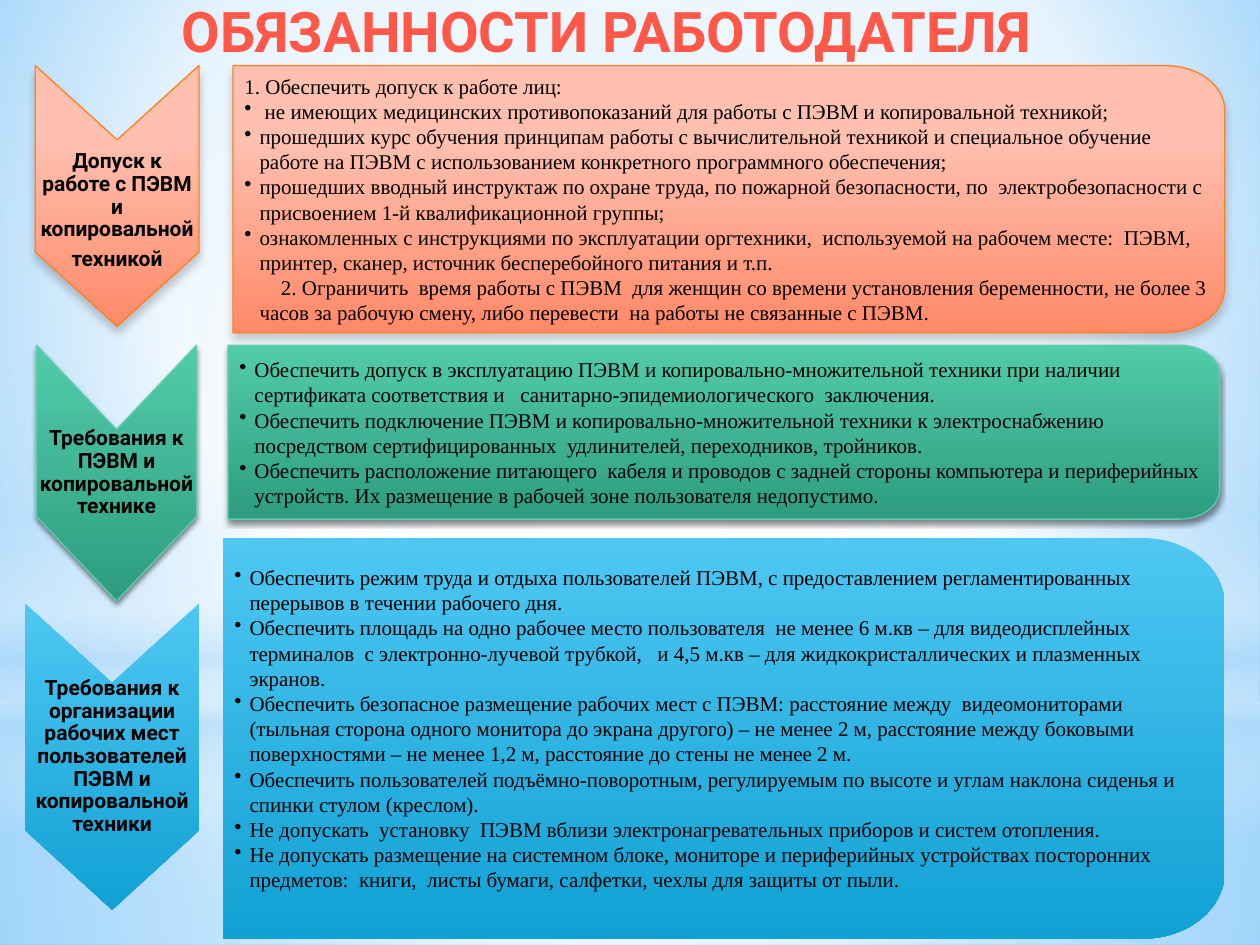
from math import cos, pi, sin

from lxml.etree import SubElement
from pptx import Presentation
from pptx.dml.color import RGBColor
from pptx.enum.shapes import MSO_SHAPE
from pptx.enum.text import MSO_ANCHOR, PP_ALIGN
from pptx.oxml import parse_xml
from pptx.oxml.ns import nsdecls, qn
from pptx.util import Inches, Pt

CORAL = [(28, "FFC0AF"), (100, "FF8968")]
GREEN = [(0, "52CBA9"), (100, "2E9D7F")]
BLUE = [(0, "4EC7F2"), (100, "11A1D4")]
TITLE_RED = [(0, "FF6155"), (25, "FF5748"), (50, "EF3718"), (75, "FF5748"), (100, "FF6155")]
CENTRE = (50, 50, 50, 50)

# Backdrop layers: preset, box, stops (position, colour, opacity), focus of a radial fill
BACKDROP = [
    (MSO_SHAPE.RECTANGLE, (0, 5.58, 10, 1.92),
     [(0, "FFFFFF", 91), (37, "FFFFFF", 76), (100, "B4DCFA", 79)], CENTRE),
    (MSO_SHAPE.RECTANGLE, (0, 0, 10, 5.58),
     [(0, "FFFFFF", 89), (48, "FFFFFF", 62), (100, "B4DCFA", 79)], CENTRE),
    (MSO_SHAPE.RECTANGLE, (0, 4.12, 10, 2.5),
     [(0, "FFFFFF", 0), (29, "FFFFFF", 30), (45, "B4DCFA", 40),
      (55, "FFFFFF", 26), (65, "B4DCFA", 60), (100, "FFFFFF", 0)], None),
    (MSO_SHAPE.OVAL, (0, 1.75, 10, 5.58), [(0, "FFFFFF"), (56, "FFFFFF", 0)], CENTRE),
]

# Each duty is (kind, text): "bullet", "plain" or "indented"
DUTIES = [
    dict(
        stops=CORAL, line="FF8021", shadow=(20, 5, 4),
        arrow=(0.28, 0.52, 1.3, 2.07), notch=0.59, arrow_insets=(0.01, 0.82, 0.01, 0.58),
        heading=["Допуск к работе с ПЭВМ и копировальной", "техникой"],
        panel=(1.85, 0.52, 7.87, 2.12), corner=0.47, panel_insets=(0.09, 0.11, 0.11, 0.11),
        duties=[
            ("plain", "1. Обеспечить допуск к работе лиц:"),
            ("bullet", " не имеющих медицинских противопоказаний для работы с ПЭВМ и копировальной техникой;"),
            ("bullet", "прошедших курс обучения принципам работы с вычислительной техникой и специальное обучение работе на ПЭВМ с использованием конкретного программного обеспечения;"),
            ("bullet", "прошедших вводный инструктаж по охране труда, по пожарной безопасности, по  электробезопасности с присвоением 1-й квалификационной группы;"),
            ("bullet", "ознакомленных с инструкциями по эксплуатации оргтехники,  используемой на рабочем месте:  ПЭВМ, принтер, сканер, источник бесперебойного питания и т.п."),
            ("indented", "2. Ограничить  время работы с ПЭВМ  для женщин со времени установления беременности, не более 3 часов за рабочую смену, либо перевести  на работы не связанные с ПЭВМ."),
        ]),
    dict(
        stops=GREEN, line="5DCEAF", shadow=(45, 3.1, 1.8),
        arrow=(0.29, 2.74, 1.27, 2.03), notch=0.67, arrow_insets=(0.01, 0.6, 0.01, 0.6),
        heading=["Требования к ПЭВМ и копировальной технике"],
        panel=(1.81, 2.74, 7.87, 1.38), corner=0.32, panel_insets=(0.09, 0.07, 0.07, 0.07),
        duties=[
            ("bullet", "Обеспечить допуск в эксплуатацию ПЭВМ и копировально-множительной техники при наличии  сертификата соответствия и   санитарно-эпидемиологического  заключения."),
            ("bullet", "Обеспечить подключение ПЭВМ и копировально-множительной техники к электроснабжению посредством сертифицированных  удлинителей, переходников, тройников."),
            ("bullet", "Обеспечить расположение питающего  кабеля и проводов с задней стороны компьютера и периферийных устройств. Их размещение в рабочей зоне пользователя недопустимо."),
        ]),
    dict(
        stops=BLUE, line=None, shadow=None,
        arrow=(0.2, 4.79, 1.38, 2.43), notch=0.63, arrow_insets=(0.01, 0.62, 0.01, 0.62),
        heading=["Требования к организации рабочих мест пользователей ПЭВМ и копировальной техники"],
        panel=(1.77, 4.27, 7.95, 3.18), corner=0.65, panel_insets=(0.09, 0.15, 0.15, 0.31),
        duties=[
            ("bullet", "Обеспечить режим труда и отдыха пользователей ПЭВМ, с предоставлением регламентированных перерывов в течении рабочего дня."),
            ("bullet", "Обеспечить площадь на одно рабочее место пользователя  не менее 6 м.кв – для видеодисплейных терминалов  с электронно-лучевой трубкой,   и 4,5 м.кв – для жидкокристаллических и плазменных экранов."),
            ("bullet", "Обеспечить безопасное размещение рабочих мест с ПЭВМ: расстояние между  видеомониторами (тыльная сторона одного монитора до экрана другого) – не менее 2 м, расстояние между боковыми поверхностями – не менее 1,2 м, расстояние до стены не менее 2 м."),
            ("bullet", "Обеспечить пользователей подъёмно-поворотным, регулируемым по высоте и углам наклона сиденья и спинки стулом (креслом)."),
            ("bullet", "Не допускать  установку  ПЭВМ вблизи электронагревательных приборов и систем отопления."),
            ("bullet", "Не допускать размещение на системном блоке, мониторе и периферийных устройствах посторонних предметов:  книги,  листы бумаги, салфетки, чехлы для защиты от пыли."),
        ]),
]


def color(value):
    return RGBColor.from_string(value)


def paint_gradient(fill, owner, stops, focus=None):
    """Fill with vertical stops, or radial ones around a focus (left, top, right, bottom in %)."""
    fill.gradient()
    gradient = parse_xml(f'<a:gradFill {nsdecls("a")} rotWithShape="1"><a:gsLst/></a:gradFill>')
    for position, value, *opacity in stops:
        stop = SubElement(gradient[0], qn("a:gs"), pos=str(position * 1000))
        tint = SubElement(stop, qn("a:srgbClr"), val=value)
        if opacity:
            SubElement(tint, qn("a:alpha"), val=str(opacity[0] * 1000))
    if focus:
        radial = SubElement(gradient, qn("a:path"), attrib={"path": "circle"})
        SubElement(radial, qn("a:fillToRect"),
                   attrib={side: str(share * 1000) for side, share in zip("ltrb", focus)})
    else:
        SubElement(gradient, qn("a:lin"), ang="5400000", scaled="0")
    default = next(owner.iter(qn("a:gradFill")))
    default.getparent().replace(default, gradient)


def add_outline(slide, points, row):
    """Closed outline in the row's fill, line and shadow."""
    corners = [(Inches(x), Inches(y)) for x, y in points]
    builder = slide.shapes.build_freeform(*corners[0])
    builder.add_line_segments(corners[1:], close=True)
    outline = builder.convert_to_shape()
    paint_gradient(outline.fill, outline._element, row["stops"])
    if row["line"]:
        outline.line.color.rgb = color(row["line"])
        outline.line.width = Pt(0.75)
    else:
        outline.line.fill.background()
    outline.shadow.inherit = False
    if row["shadow"]:
        opacity, blur, distance = row["shadow"]
        effects = outline._element.spPr.find(qn("a:effectLst"))
        effects.append(parse_xml(
            f'<a:outerShdw {nsdecls("a")} blurRad="{Pt(blur)}" dist="{Pt(distance)}" '
            f'dir="5400000" rotWithShape="0"><a:srgbClr val="000000">'
            f'<a:alpha val="{opacity * 1000}"/></a:srgbClr></a:outerShdw>'))
    return outline


def set_frame(frame, insets, anchor=MSO_ANCHOR.MIDDLE):
    frame.word_wrap = True
    frame.vertical_anchor = anchor
    (frame.margin_left, frame.margin_top,
     frame.margin_right, frame.margin_bottom) = map(Inches, insets)


def add_paragraph(frame, index, text, font_name, bold, align):
    paragraph = frame.add_paragraph() if index else frame.paragraphs[0]
    paragraph.alignment = align
    run = paragraph.add_run()
    run.text = text
    run.font.name, run.font.size, run.font.bold = font_name, Pt(12), bold
    run.font.color.rgb = color("000000")
    return paragraph


def add_arrow(slide, box, row):
    left, top, width, height = box
    right, bottom, middle, notch = left + width, top + height, left + width / 2, row["notch"]
    arrow = add_outline(slide, [
        (left, top), (middle, top + notch), (right, top),
        (right, bottom - notch), (middle, bottom), (left, bottom - notch)], row)
    set_frame(arrow.text_frame, row["arrow_insets"])
    for index, text in enumerate(row["heading"]):
        paragraph = add_paragraph(arrow.text_frame, index, text, "Roboto", True, PP_ALIGN.CENTER)
        paragraph.line_spacing = 0.9
        paragraph.space_after = Pt(4.2)


def add_panel(slide, box, row):
    left, top, width, height = box
    right, bottom = left + width, top + height
    corner_x, corner_y = row["corner"], height / 6
    # Quarter ellipse from the top edge to the right edge, mirrored at the bottom
    arc = [(right - corner_x * (1 - sin(step * pi / 32)), corner_y * (1 - cos(step * pi / 32)))
           for step in range(17)]
    panel = add_outline(slide, [(left, top)] + [(x, top + y) for x, y in arc]
                        + [(x, bottom - y) for x, y in reversed(arc)] + [(left, bottom)], row)
    set_frame(panel.text_frame, row["panel_insets"])
    for index, (kind, text) in enumerate(row["duties"]):
        paragraph = add_paragraph(panel.text_frame, index, text, "Times New Roman", False, PP_ALIGN.LEFT)
        if kind == "plain":
            continue
        properties = paragraph._p.get_or_add_pPr()
        properties.set("marL", str(Inches(0.12)))
        properties.set("indent", str(Inches(-0.12 if kind == "bullet" else 0.17)))
        if kind == "bullet":
            SubElement(properties, qn("a:buChar"), char="•")


def add_backdrop(slide):
    paint_gradient(slide.background.fill, slide._element,
                   [(0, "9ED5FF"), (60, "FFFFFF"), (100, "5BB9FF")], (20, 10, 20, 60))
    for preset, box, stops, focus in BACKDROP:
        layer = slide.shapes.add_shape(preset, *map(Inches, box))
        paint_gradient(layer.fill, layer._element, stops, focus)
        layer.line.fill.background()
        layer.shadow.inherit = False


def add_title(slide, box):
    title = slide.shapes.title
    title.left, title.top, title.width, title.height = map(Inches, box)
    slide.shapes._spTree.append(title._element)  # bring in front of the backdrop
    set_frame(title.text_frame, (0.1, 0.08, 0.1, 0), MSO_ANCHOR.TOP)
    paragraph = title.text_frame.paragraphs[0]
    paragraph.alignment = PP_ALIGN.CENTER
    run = paragraph.add_run()
    run.text = "ОБЯЗАННОСТИ РАБОТОДАТЕЛЯ"
    run.font.name, run.font.size, run.font.bold = "Roboto", Pt(32), True
    paint_gradient(run.font.fill, run._r, TITLE_RED)


def main():
    presentation = Presentation()
    presentation.slide_width, presentation.slide_height = Inches(10), Inches(7.5)
    slide = presentation.slides.add_slide(presentation.slide_layouts[5])
    add_backdrop(slide)
    add_title(slide, (0.93, -0.11, 7.77, 0.52))
    for row in DUTIES:
        add_arrow(slide, row["arrow"], row)
        add_panel(slide, row["panel"], row)
    presentation.save("out.pptx")


if __name__ == "__main__":
    main()
